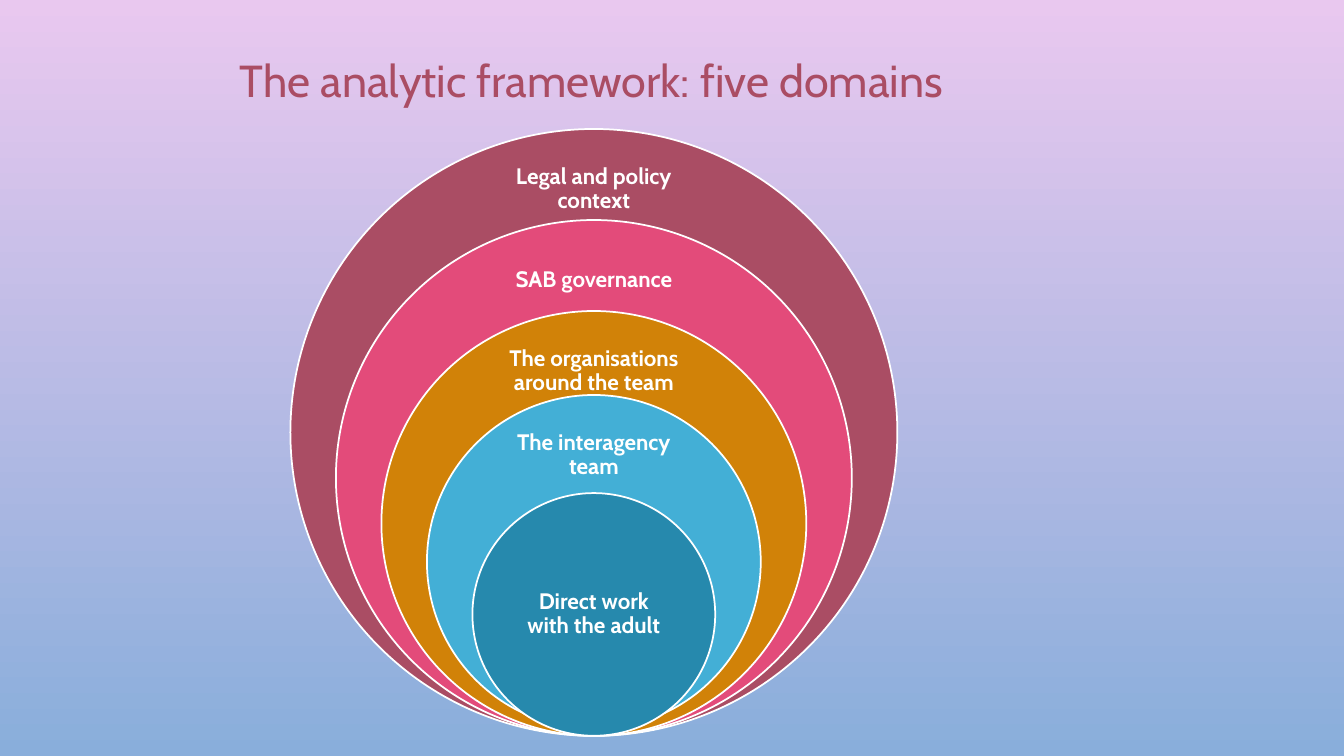
"""Builds a slide of five nested circles, one for each domain of the analytic framework."""
from pptx import Presentation
from pptx.dml.color import RGBColor
from pptx.enum.shapes import MSO_SHAPE as Shape
from pptx.enum.text import MSO_ANCHOR as Anchor, PP_ALIGN as Align
from pptx.util import Inches, Pt

COLORS = {
    "sky_top": "E9C8EF", "sky_bottom": "89AEDB", "white": "FFFFFF",
    "wine": "AA4D64", "pink": "E34B7A", "amber": "D18208",
    "light_blue": "43AFD6", "deep_blue": "2689AD",
}
CENTER, BASE = 58.9, 73
OUTER, STEP = 60.2, 9.03

DOMAINS = [
    ("Legal and policy context", "wine", 22.6, 0),
    ("SAB governance", "pink", 22.1, 0),
    ("The organisations around the team", "amber", 21.8, 0),
    ("The interagency team", "light_blue", 17.9, 0.7),
    ("Direct work with the adult", "deep_blue", 17, 0),
]


def color(name):
    return RGBColor.from_string(COLORS[name])


def write_text(frame, text, *, size, ink, bold=False, align=Align.LEFT,
               anchor=Anchor.TOP, spacing=1.0, inset=(0.1, 0.05), wrap=True):
    frame.word_wrap = wrap
    frame.vertical_anchor = anchor
    frame.margin_left = frame.margin_right = Inches(inset[0])
    frame.margin_top = frame.margin_bottom = Inches(inset[1])
    para = frame.paragraphs[0]
    para.alignment, para.line_spacing = align, spacing
    para.space_before = Pt(0)
    span = para.add_run()
    span.text = text
    span.font.name, span.font.size, span.font.bold = "Cabin", Pt(size), bold
    span.font.color.rgb = color(ink)


class Page:
    """Holds the slide and its square grid of 75 rows."""

    def __init__(self, deck):
        self.slide = deck.slides.add_slide(deck.slide_layouts[5])
        self.cell = deck.slide_height / 75

    def grid(self, *cells):
        return [round(cell * self.cell) for cell in cells]

    def background(self, top, bottom):
        fill = self.slide.background.fill
        fill.gradient()
        fill.gradient_angle = 270
        for stop, name, position in zip(fill.gradient_stops, (top, bottom), (0, 1)):
            stop.color.rgb = color(name)
            stop.position = position

    def title(self, text, column, row, columns, rows):
        box = self.slide.shapes.title
        box.left, box.top, box.width, box.height = self.grid(column, row, columns, rows)
        write_text(box.text_frame, text, size=32, ink="wine", wrap=False)

    def circle(self, column, row, diameter, fill):
        shape = self.slide.shapes.add_shape(
            Shape.OVAL, *self.grid(column, row, diameter, diameter))
        shape.shadow.inherit = False
        shape.fill.solid()
        shape.fill.fore_color.rgb = color(fill)
        shape.line.color.rgb = color("white")
        shape.line.width = Pt(1.25)

    def label(self, text, column, row, columns, rows):
        box = self.slide.shapes.add_textbox(*self.grid(column, row, columns, rows))
        write_text(box.text_frame, text, size=16, ink="white", bold=True,
                   align=Align.CENTER, anchor=Anchor.MIDDLE, spacing=0.9,
                   inset=(0.12, 0.12))


def main():
    deck = Presentation()
    deck.slide_width, deck.slide_height = Inches(13.33), Inches(7.5)
    page = Page(deck)
    page.background("sky_top", "sky_bottom")
    page.title("The analytic framework: five domains", 22.8, 4.7, 76, 6.4)
    for level, (name, fill, width, lift) in enumerate(DOMAINS):
        diameter = OUTER - level * STEP
        top = BASE - lift - diameter
        innermost = level == len(DOMAINS) - 1
        offset, height = (diameter / 4, diameter / 2) if innermost else (3, 6)
        page.circle(CENTER - diameter / 2, top, diameter, fill)
        page.label(name, CENTER - width / 2, top + offset, width, height)
    deck.save("out.pptx")


if __name__ == "__main__":
    main()
